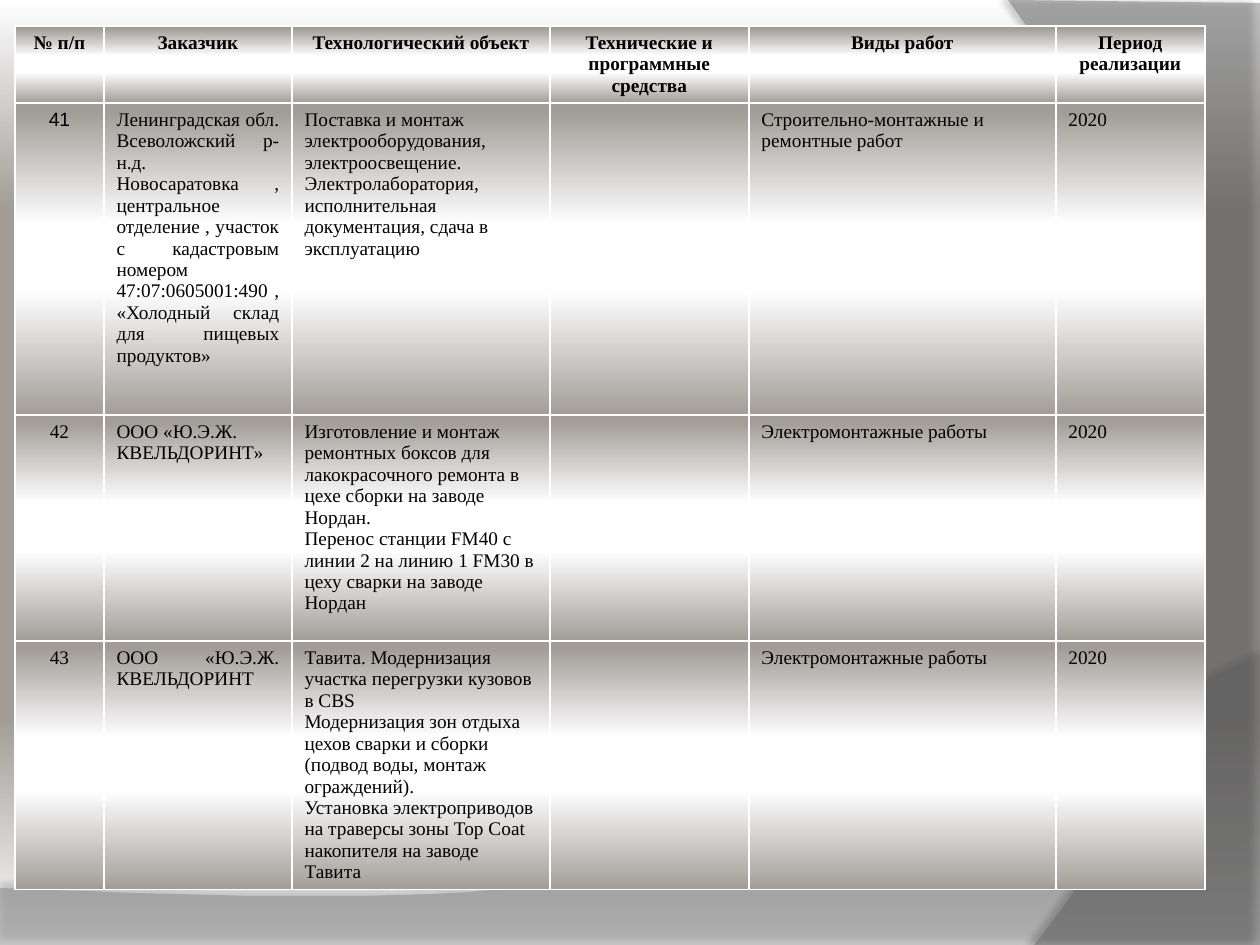
from lxml import etree
from pptx import Presentation
from pptx.dml.color import RGBColor
from pptx.enum.text import PP_ALIGN
from pptx.oxml import parse_xml
from pptx.oxml.ns import nsdecls, qn
from pptx.util import Pt

LEFT, MID, JUST = PP_ALIGN.LEFT, PP_ALIGN.CENTER, PP_ALIGN.JUSTIFY
SCALE = 914400 / 126
SERIF, SANS = "Times New Roman", "Arial"
HUES = {"white": "FFFFFF", "stone": "A29D99", "ink": "000000",
        "wave": "7F7F7F", "side": "5E5E5E"}
BACK = [(0, "white"), (22, "stone"), (76, "stone"), (100, "white")]
CELL = [(3, "stone"), (39, "white"), (60, "white"), (100, "stone")]
COLS = [89, 188, 258, 199, 307, 149]
ROWS = [77, 312, 226, 248]
ALIGNS = [
    [MID] * 6,
    [MID, JUST, LEFT, LEFT, LEFT, JUST],
    [MID, LEFT, LEFT, LEFT, JUST, LEFT],
    [MID, JUST, LEFT, LEFT, JUST, JUST],
]
TEXTS = [
    ["№ п/п", "Заказчик", "Технологический объект",
     "Технические и программные средства", "Виды работ", "Период реализации"],
    ["41",
     "Ленинградская обл. Всеволожский р-н.д. Новосаратовка , центральное "
     "отделение , участок с кадастровым номером 47:07:0605001:490 , "
     "«Холодный склад для пищевых продуктов»",
     "Поставка и монтаж электрооборудования, электроосвещение. "
     "Электролаборатория, исполнительная документация, сдача в эксплуатацию",
     "", "Строительно-монтажные и ремонтные работ", "2020"],
    ["42", "ООО «Ю.Э.Ж. КВЕЛЬДОРИНТ»",
     "Изготовление и монтаж\nремонтных боксов для\nлакокрасочного ремонта в\n"
     "цехе сборки на заводе Нордан.\n"
     "Перенос станции FM40 c линии 2 на линию 1 FM30 в цеху сварки "
     "на заводе Нордан",
     "", "Электромонтажные работы", "2020"],
    ["43", "ООО «Ю.Э.Ж. КВЕЛЬДОРИНТ",
     "Тавита. Модернизация участка перегрузки кузовов в CBS\n"
     "Модернизация зон отдыха цехов сварки и сборки "
     "(подвод воды, монтаж ограждений).\n"
     "Установка электроприводов на траверсы зоны Top Coat "
     "накопителя на заводе Тавита",
     "", "Электромонтажные работы", "2020"],
]


def px(num):
    return round(num * SCALE)


def blend(fill, root, stops):
    """Give a fill a vertical gradient; root is the XML that holds it."""
    fill.gradient()
    fill.gradient_angle = 270
    group = next(root.iter(qn("a:gsLst")))
    for old in list(group):
        group.remove(old)
    for pos, hue in stops:
        stop = etree.SubElement(group, qn("a:gs"), pos=str(pos * 1000))
        etree.SubElement(stop, qn("a:srgbClr"), val=HUES[hue])


def curve(start, one, two, end, steps=32):
    """Return points along a cubic Bezier curve, start left out."""
    points = []
    for step in range(1, steps + 1):
        t = step / steps
        s = 1 - t
        points.append(tuple(
            s**3 * a + 3 * s * s * t * b + 3 * s * t * t * c + t**3 * d
            for a, b, c, d in zip(start, one, two, end)))
    return points


def add_sweep(slide, lines, bend, hue, alpha, shade):
    """Draw a see-through outline whose last side is a curve."""
    pen = slide.shapes.build_freeform(*lines[0], scale=SCALE)
    pen.add_line_segments(lines[1:] + curve(lines[-1], *bend), close=True)
    shape = pen.convert_to_shape()
    shape.line.fill.background()
    shape.fill.solid()
    shape.fill.fore_color.rgb = RGBColor.from_string(HUES[hue])
    props = shape.element.spPr
    color = next(props.iter(qn("a:srgbClr")))
    etree.SubElement(color, qn("a:alpha"), val=str(alpha * 1000))
    dark, blur, dist, angle = shade
    props.append(parse_xml(
        f'<a:effectLst {nsdecls("a")}><a:outerShdw blurRad="{Pt(blur)}" '
        f'dist="{Pt(dist)}" dir="{angle * 60000}" rotWithShape="0">'
        f'<a:srgbClr val="{HUES["ink"]}"><a:alpha val="{dark * 1000}"/>'
        '</a:srgbClr></a:outerShdw></a:effectLst>'))


def add_edges(props):
    for spot, side in enumerate(("lnL", "lnR", "lnT", "lnB")):
        props.insert(spot, parse_xml(
            f'<a:{side} {nsdecls("a")} w="{Pt(1)}"><a:solidFill>'
            f'<a:srgbClr val="{HUES["white"]}"/></a:solidFill></a:{side}>'))


def fill_cell(cell, text, align, form):
    props = cell._tc.get_or_add_tcPr()
    blend(cell.fill, props, CELL)
    add_edges(props)
    cell.text = text
    for para in cell.text_frame.paragraphs:
        para.alignment = align
        for name, value in form.items():
            setattr(para.font, name, value)
        para.font.color.rgb = RGBColor.from_string(HUES["ink"])


def add_grid(slide):
    grid = slide.shapes.add_table(
        len(ROWS), len(COLS), px(15), px(26),
        px(sum(COLS)), px(sum(ROWS))).table
    for col, width in zip(grid.columns, COLS):
        col.width = px(width)
    for row, height in zip(grid.rows, ROWS):
        row.height = px(height)
    for r, (texts, aligns) in enumerate(zip(TEXTS, ALIGNS)):
        for c, (text, align) in enumerate(zip(texts, aligns)):
            form = {"name": SANS if text == "41" else SERIF,
                    "size": Pt(11), "bold": r == 0}
            fill_cell(grid.cell(r, c), text, align, form)


def main():
    deck = Presentation()
    deck.slide_width, deck.slide_height = px(1260), px(945)
    slide = deck.slides.add_slide(deck.slide_layouts[6])
    blend(slide.background.fill, slide.element, BACK)
    add_sweep(slide, [(0, 888), (0, 946), (1260, 946), (1260, 655)],
              [(704, 919), (493, 906), (0, 888)], "wave", 45,
              (35, 4, 3.5, 270))
    add_sweep(slide, [(1008, 0), (1260, 3), (1260, 945), (1034, 945)],
              [(1178, 780), (1283, 378), (1008, 0)], "side", 40,
              (45, 4, 4, 180))
    add_grid(slide)
    deck.save("out.pptx")


if __name__ == "__main__":
    main()
